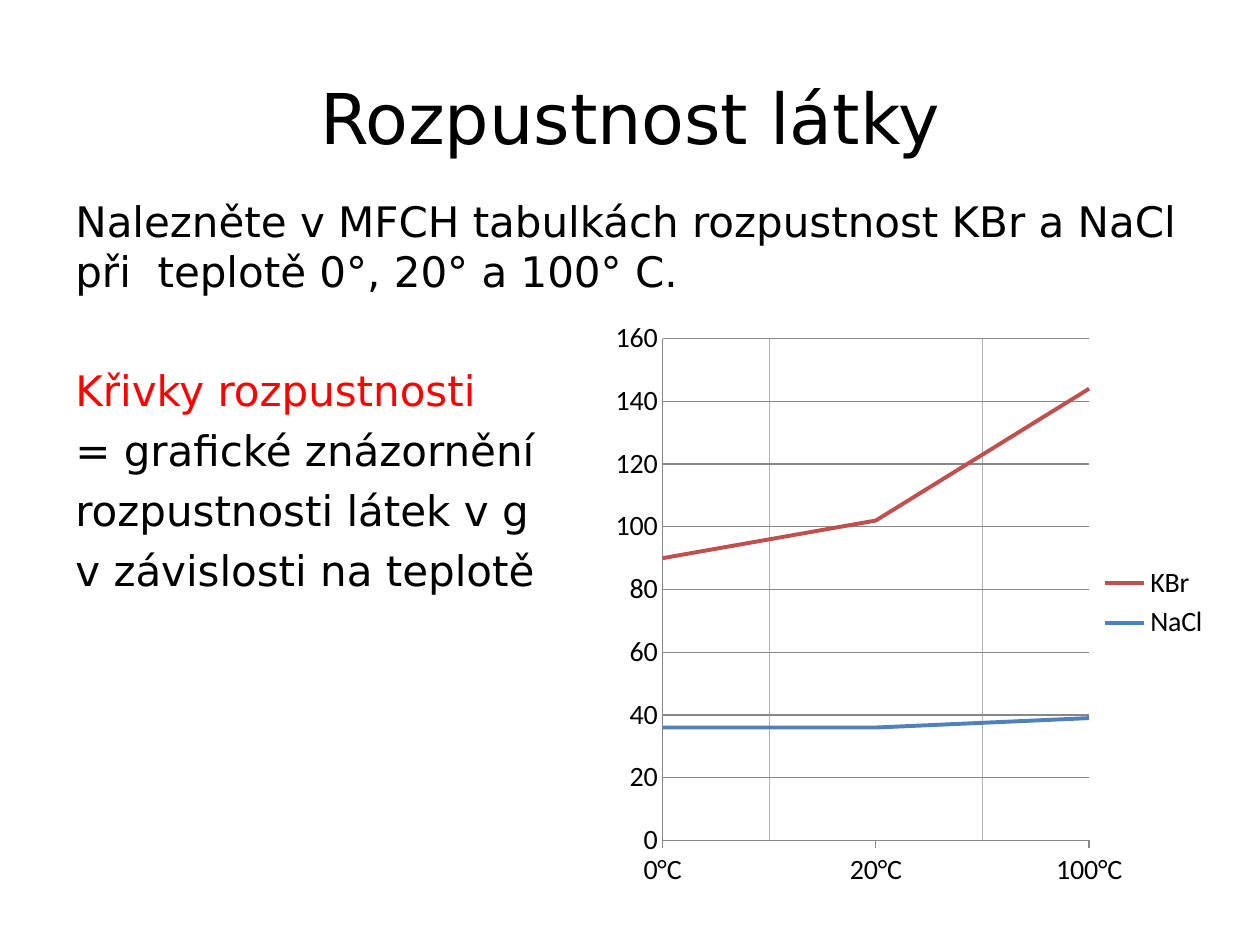
from pptx import Presentation
from pptx.chart.data import CategoryChartData
from pptx.dml.color import RGBColor
from pptx.enum.chart import XL_CHART_TYPE, XL_LEGEND_POSITION, XL_TICK_MARK
from pptx.enum.text import MSO_ANCHOR, PP_ALIGN
from pptx.oxml import parse_xml
from pptx.oxml.ns import nsdecls, qn
from pptx.util import Pt

LINE_STACKED = XL_CHART_TYPE.LINE_STACKED
RIGHT = XL_LEGEND_POSITION.RIGHT
TICK_NONE, TICK_OUTSIDE = XL_TICK_MARK.NONE, XL_TICK_MARK.OUTSIDE
MIDDLE = MSO_ANCHOR.MIDDLE
CENTER, LEFT = PP_ALIGN.CENTER, PP_ALIGN.LEFT
TITLE_ONLY = 5


def color(value):
    """Turn a hex string into a colour."""
    return RGBColor.from_string(value)


def write(paragraph, text, size=24, fill="000000", font="DejaVu Sans", align=LEFT, before=0):
    """Put formatted text into a paragraph."""
    paragraph.text = text
    paragraph.alignment = align
    paragraph.space_before = Pt(before)
    paragraph.font.size = Pt(size)
    paragraph.font.name = font
    paragraph.font.color.rgb = color(fill)


def style_line(line, fill, width):
    """Set the colour and width of a line."""
    line.color.rgb = color(fill)
    line.width = Pt(width)


def place_plot(chart, x, y, width, height):
    """Fix the inner plot area as fractions of the chart."""
    plot_area = chart.plots[0]._element.getparent()
    for layout in plot_area.findall(qn("c:layout")):
        plot_area.remove(layout)
    values = {"x": x, "y": y, "w": width, "h": height}
    sizes = "".join(f'<c:{name} val="{value}"/>' for name, value in values.items())
    plot_area.insert(0, parse_xml(
        f'<c:layout {nsdecls("c")}><c:manualLayout><c:layoutTarget val="inner"/>'
        f'<c:xMode val="edge"/><c:yMode val="edge"/>{sizes}</c:manualLayout></c:layout>'))


def start_on_axis(value_axis):
    """Let the value axis cross at the first category."""
    element = value_axis._element
    for crossing in element.findall(qn("c:crossBetween")):
        element.remove(crossing)
    element.find(qn("c:crosses")).addnext(
        parse_xml(f'<c:crossBetween {nsdecls("c")} val="midCat"/>'))


def add_minor_gridlines(axis, fill, width):
    """Show the minor gridlines of an axis in one colour."""
    axis.has_minor_gridlines = True
    axis._element.find(qn("c:minorGridlines")).append(parse_xml(
        f'<c:spPr {nsdecls("c", "a")}><a:ln w="{Pt(width)}"><a:solidFill>'
        f'<a:srgbClr val="{color(fill)}"/></a:solidFill></a:ln></c:spPr>'))


class SlideBuilder:
    """Holds the chart style and the current slide."""

    chart_font, chart_size = "Calibri", 16
    axis_color, minor_color = "878787", "B3B3B3"

    def __init__(self, presentation):
        """Add a title-only slide."""
        self.slide = presentation.slides.add_slide(presentation.slide_layouts[TITLE_ONLY])

    def title(self, text, left, top, width, height):
        """Place and fill the title."""
        shape = self.slide.shapes.title
        shape.left, shape.top, shape.width, shape.height = map(Pt, (left, top, width, height))
        shape.text_frame.vertical_anchor = MIDDLE
        write(shape.text_frame.paragraphs[0], text, size=40, align=CENTER)

    def body(self, lines, left, top, width, height):
        """Add a text box from pairs of text and format."""
        shape = self.slide.shapes.add_textbox(*map(Pt, (left, top, width, height)))
        frame = shape.text_frame
        frame.word_wrap = True
        for index, (text, style) in enumerate(lines):
            paragraph = frame.add_paragraph() if index else frame.paragraphs[0]
            write(paragraph, text, **style)

    def line_chart(self, categories, series, left, top, width, height):
        """Add a stacked line chart from rows of name, values and colour."""
        data = CategoryChartData()
        data.categories = categories
        for name, values, _ in series:
            data.add_series(name, values)
        chart = self.slide.shapes.add_chart(
            LINE_STACKED, *map(Pt, (left, top, width, height)), data).chart
        chart.has_title = False
        chart.font.name = self.chart_font
        chart.font.size = Pt(self.chart_size)
        chart.font.color.rgb = color("000000")
        chart.has_legend = True
        chart.legend.position = RIGHT
        chart.legend.include_in_layout = False
        plot = chart.plots[0]
        plot.vary_by_categories = False
        for line, (_, _, fill) in zip(plot.series, series):
            line.smooth = False
            style_line(line.format.line, fill, 2.25)
        self.axes(chart)
        return chart

    def axes(self, chart):
        """Format both axes and their gridlines."""
        category_axis, value_axis = chart.category_axis, chart.value_axis
        for axis, tick in ((category_axis, TICK_OUTSIDE), (value_axis, TICK_NONE)):
            axis.major_tick_mark = tick
            axis.minor_tick_mark = TICK_NONE
            style_line(axis.format.line, self.axis_color, 0.75)
        add_minor_gridlines(category_axis, self.minor_color, 0.75)
        value_axis.has_major_gridlines = True
        style_line(value_axis.major_gridlines.format.line, self.axis_color, 0.75)
        value_axis.minimum_scale, value_axis.maximum_scale = 0, 160
        value_axis.major_unit = 20
        start_on_axis(value_axis)


def main():
    """Build and save the solubility slide."""
    presentation = Presentation()
    presentation.slide_width, presentation.slide_height = Pt(720), Pt(540)
    builder = SlideBuilder(presentation)
    builder.title("Rozpustnost látky", 36, 21.6, 648, 90)
    builder.body([
        ("Nalezněte v MFCH tabulkách rozpustnost KBr a NaCl při  teplotě 0°, 20° a 100° C.", {}),
        ("Křivky rozpustnosti", {"fill": "FF0000", "before": 39}),
        ("= grafické znázornění", {"before": 5.6}),
        ("rozpustnosti látek v g", {"before": 5.6}),
        ("v závislosti na teplotě", {"before": 5.6}),
    ], 36, 108, 648, 374)
    chart = builder.line_chart(
        ["0°C", "20°C", "100°C"],
        [("NaCl", (36, 36, 39), "4F81BD"), ("KBr", (54, 66, 105), "C0504D")],
        320.4, 179.3, 378, 330.5)
    place_plot(chart, 0.154, 0.043, 0.645, 0.868)
    presentation.save("out.pptx")


if __name__ == "__main__":
    main()
